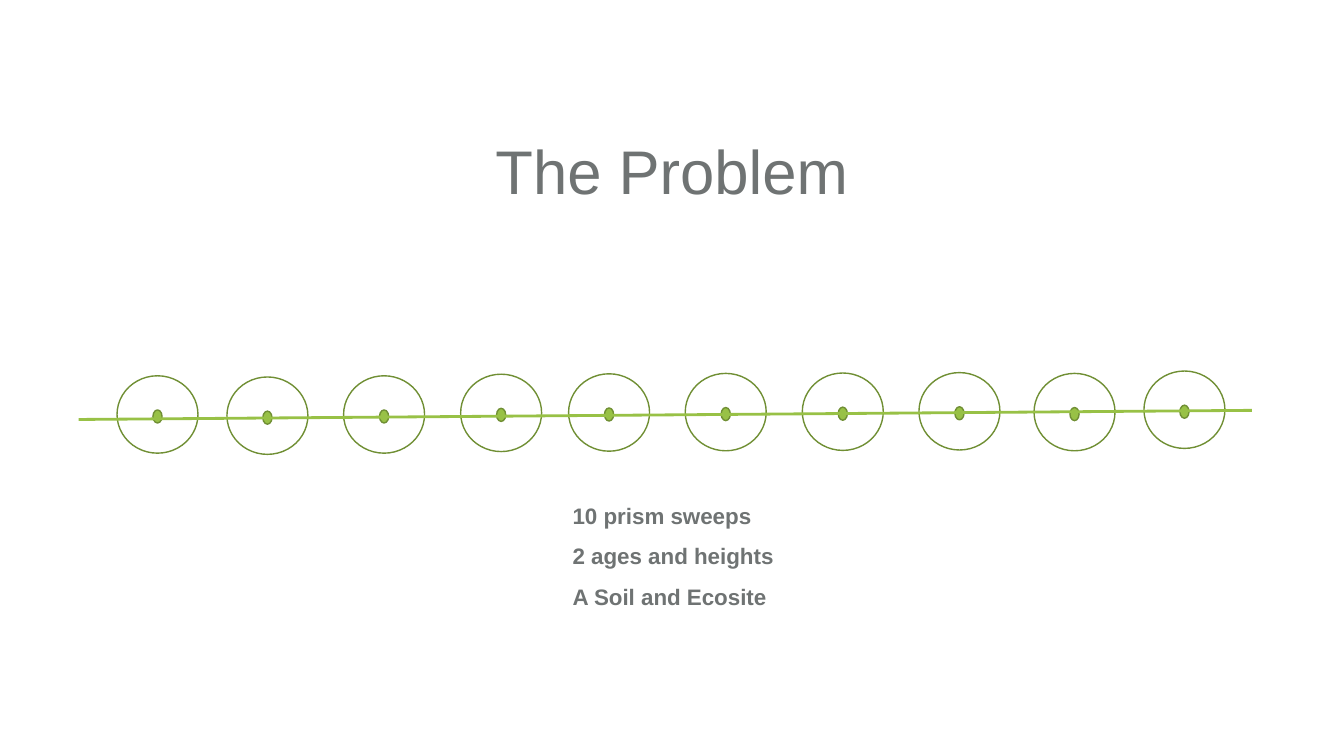
from pptx import Presentation
from pptx import util as u
from pptx.dml import color
from pptx.enum import shapes, text
from pptx.oxml import ns
from lxml import etree

Cm, Pt = u.Cm, u.Pt
rgb = color.RGBColor.from_string
theme = {
    "font": "Arial",
    "grey": rgb("6F7373"),
    "green": rgb("98C146"),
    "edge": rgb("708F34"),
    "title": Pt(44),
    "body": Pt(16),
    "thin": Pt(1),
    "thick": Pt(2),
}

deck = Presentation()
deck.slide_width, deck.slide_height = Cm(33.87), Cm(19.05)
slide = deck.slides.add_slide(deck.slide_layouts[6])


def write(lines, box, size, bold=False, align=text.PP_ALIGN.LEFT, space=1.0, inset=(0.25, 0.13, 0.25, 0.13),
          fit=text.MSO_AUTO_SIZE.NONE):
    frame = slide.shapes.add_textbox(*map(Cm, box)).text_frame
    frame.word_wrap = True
    frame.auto_size = fit
    frame.margin_left, frame.margin_top, frame.margin_right, frame.margin_bottom = map(Cm, inset)
    frame.text = "\n".join(lines)
    for para in frame.paragraphs:
        para.alignment = align
        para.line_spacing = space
        para.font.name = theme["font"]
        para.font.size = size
        para.font.bold = bold
        para.font.color.rgb = theme["grey"]


def oval(left, top, wide, high, fill=None):
    shape = slide.shapes.add_shape(shapes.MSO_SHAPE.OVAL, Cm(left), Cm(top), Cm(wide), Cm(high))
    shape.shadow.inherit = False
    shape.line.color.rgb = theme["edge"]
    shape.line.width = theme["thin"]
    if fill is None:
        shape.fill.background()
    else:
        shape.fill.solid()
        shape.fill.fore_color.rgb = fill


write(["The Problem"], (2.33, 3.43, 29.21, 2.84), theme["title"], align=text.PP_ALIGN.CENTER, space=0.9)
write(["10 prism sweeps", "2 ages and heights", "A Soil and Ecosite"], (14.43, 12.32, 7.39, 2.95),
      theme["body"], bold=True, space=1.5, inset=(0, 0, 0.25, 0), fit=text.MSO_AUTO_SIZE.SHAPE_TO_FIT_TEXT)

wide, high = 2.04, 1.95
dot_w, dot_h = 0.23, 0.33
drop = 0.86
sweeps = [
    (2.95, 9.47), (5.72, 9.5), (8.66, 9.47), (11.61, 9.43), (14.33, 9.42),
    (17.27, 9.41), (20.22, 9.4), (23.16, 9.39), (26.06, 9.41), (28.83, 9.35),
]
for left, top in sweeps:
    oval(left, top, wide, high)
    oval(left + (wide - dot_w) / 2, top + drop, dot_w, dot_h, theme["green"])

path_line = slide.shapes.add_connector(shapes.MSO_CONNECTOR.STRAIGHT, Cm(1.98), Cm(10.57), Cm(31.55), Cm(10.34))
path_line.line.color.rgb = theme["green"]
path_line.line.width = theme["thick"]
etree.SubElement(path_line._element.spPr, ns.qn("a:effectLst"))

deck.save("out.pptx")
